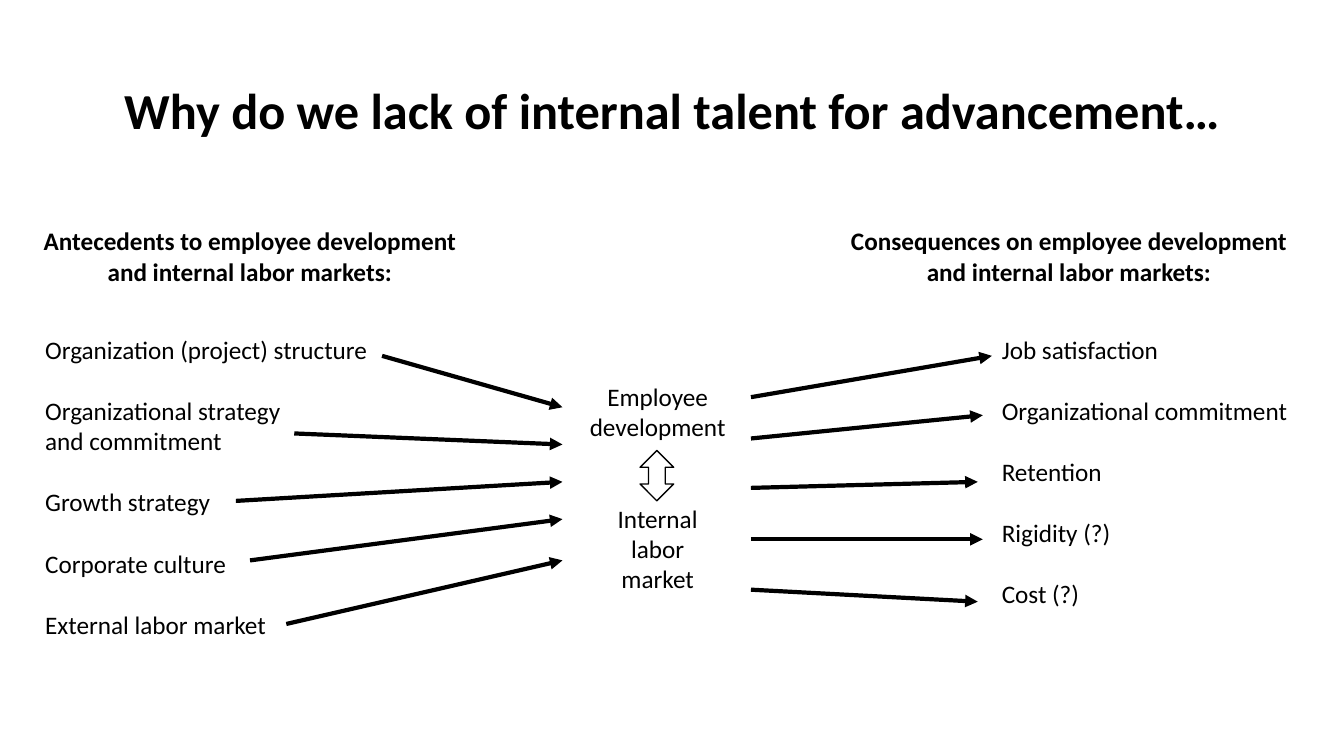
from lxml.etree import SubElement
from pptx import Presentation
from pptx.dml.color import RGBColor
from pptx.enum.shapes import MSO_CONNECTOR, MSO_SHAPE
from pptx.enum.text import MSO_ANCHOR, PP_ALIGN
from pptx.oxml.ns import qn
from pptx.util import Pt

COLORS = {"ink": "000000", "paper": "FFFFFF"}
FONT = "Calibri"
LINE = 22  # height of one 18 pt line

TITLE = ["Why do we lack of internal talent for advancement…"]
# Text, then left, top, width, height; "\v" breaks a line within an item
HEADS = [
    (["Antecedents to employee development", "and internal labor markets:"],
     (23, 157.7, 311, 51)),
    (["Consequences on employee development", "and internal labor markets:"],
     (599.8, 157.7, 327.6, 51)),
]
LISTS = [
    (["Organization (project) structure",
      "Organizational strategy\vand commitment",
      "Growth strategy", "Corporate culture", "External labor market"],
     (25.2, 235.4, 247, 225.4)),
    (["Job satisfaction", "Organizational commitment", "Retention",
      "Rigidity (?)", "Cost (?)"],
     (708.5, 235.4, 220.3, 203.8)),
]
CORE = ["Employee\vdevelopment", "Internal\vlabor\vmarket"]

# Inward arrows: start x, start y, end y; outward: start y, end x, end y
IN_X, OUT_X = 401.8, 536.4
INWARD = [(272.9, 254.2, 290.9), (210.2, 309.6, 317.5), (168.5, 357.8, 344.2),
          (178.6, 400.3, 370.8), (204.5, 445.7, 400.3)]
OUTWARD = [(283.7, 708.5, 254.2), (313.2, 702, 296.6), (348.5, 698.4, 344.2),
           (385.2, 702, 385.2), (421.2, 698.4, 429.8)]


def color(name):
    return RGBColor.from_string(COLORS[name])


def add_text(slide, items, box, size=18, bold=False, align=PP_ALIGN.LEFT,
             gap=0, spacing=1.0, anchor=MSO_ANCHOR.TOP, wrap=False):
    """Add one paragraph per item, with gap points between paragraphs."""
    frame = slide.shapes.add_textbox(*map(Pt, box)).text_frame
    frame.word_wrap = wrap
    frame.vertical_anchor = anchor
    for i, item in enumerate(items):
        para = frame.add_paragraph() if i else frame.paragraphs[0]
        para.text = item
        para.alignment = align
        para.line_spacing = spacing
        para.space_before = Pt(gap if i else 0)
        para.font.size = Pt(size)
        for run in para.runs:
            font = run.font
            font.name, font.size, font.bold = FONT, Pt(size), bold
            font.color.rgb = color("ink")


def add_arrow(slide, x1, y1, x2, y2):
    arrow = slide.shapes.add_connector(
        MSO_CONNECTOR.STRAIGHT, Pt(x1), Pt(y1), Pt(x2), Pt(y2))
    arrow.line.width = Pt(3)
    arrow.line.color.rgb = color("ink")
    SubElement(arrow.line._get_or_add_ln(), qn("a:tailEnd"), type="triangle")
    SubElement(arrow._element.spPr, qn("a:effectLst"))


def main():
    deck = Presentation()
    deck.slide_width, deck.slide_height = Pt(960), Pt(540)
    slide = deck.slides.add_slide(deck.slide_layouts[6])

    add_text(slide, TITLE, (66.2, 28.8, 828, 104.4), size=36, bold=True,
             align=PP_ALIGN.CENTER, spacing=0.9, anchor=MSO_ANCHOR.MIDDLE,
             wrap=True)
    for items, box in HEADS:
        add_text(slide, items, box, bold=True, align=PP_ALIGN.CENTER)
    for items, box in LISTS:
        add_text(slide, items, box, gap=LINE)
    add_text(slide, CORE, (413.3, 268.6, 113, 159.8),
             align=PP_ALIGN.CENTER, gap=2 * LINE)

    for x, y, end in INWARD:
        add_arrow(slide, x, y, IN_X, end)
    for y, x, end in OUTWARD:
        add_arrow(slide, OUT_X, y, x, end)

    link = slide.shapes.add_shape(
        MSO_SHAPE.UP_DOWN_ARROW, Pt(457.2), Pt(321.8), Pt(24), Pt(36))
    link.shadow.inherit = False
    link.fill.solid()
    link.fill.fore_color.rgb = color("paper")
    link.line.color.rgb = color("ink")
    link.line.width = Pt(1)

    deck.save("out.pptx")


if __name__ == "__main__":
    main()
